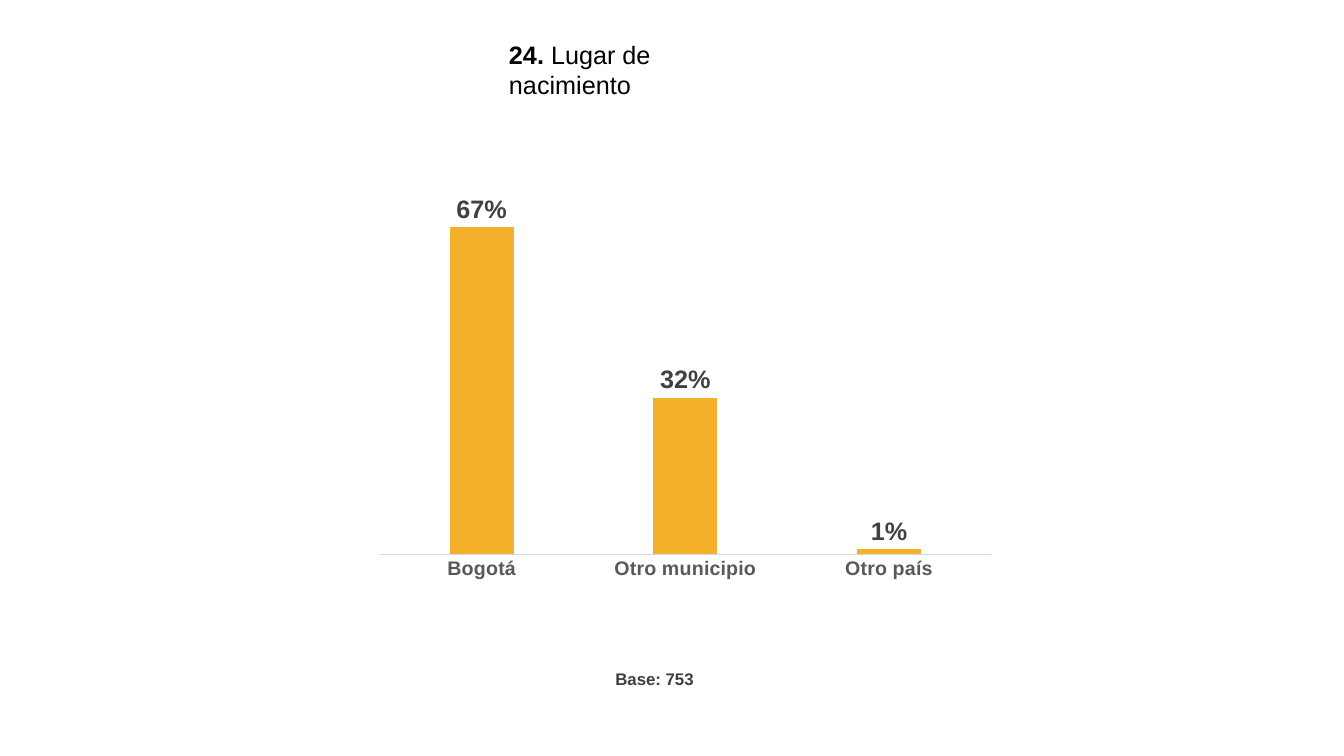
import pptx
import pptx.chart.data
import pptx.dml.color
import pptx.enum.chart
import pptx.enum.text
import pptx.oxml
import pptx.oxml.ns
import pptx.util

FONT = "Arial"
WIDTH, HEIGHT = 13.33, 7.5
TITLE = [("24. ", True), ("Lugar de nacimiento", False)]
BASE = [("Base: 753", True)]
BIRTHPLACES = {"Bogotá": 0.67, "Otro municipio": 0.32, "Otro país": 0.01}
TITLE_BOX = (4.95, 0.34, 2.76, 0.4)
BASE_BOX = (5.68, 6.62, 1.3, 0.25)
CHART_BOX = (WIDTH / 6, 0.79, WIDTH * 2 / 3, 5.93)
PLOT_AREA = {"x": 0.174, "y": 0.141, "w": 0.682, "h": 0.653}


def color(hex_text):
    return pptx.dml.color.RGBColor.from_string(hex_text)


def inches(box):
    return [pptx.util.Inches(length) for length in box]


def style(font, size, hex_text, bold=None):
    font.name = FONT
    font.size = pptx.util.Pt(size)
    font.color.rgb = color(hex_text)
    font.bold = bold


def add_text(slide, box, runs, size, hex_text):
    frame = slide.shapes.add_textbox(*inches(box)).text_frame
    frame.word_wrap = True
    frame.auto_size = pptx.enum.text.MSO_AUTO_SIZE.SHAPE_TO_FIT_TEXT
    paragraph = frame.paragraphs[0]
    style(paragraph.font, size, hex_text)
    for text, bold in runs:
        run = paragraph.add_run()
        run.text = text
        style(run.font, size, hex_text, bold)
    return paragraph


def place_plot(chart):
    plot_area = chart.plots[0]._element.getparent()
    for layout in plot_area.findall(pptx.oxml.ns.qn("c:layout")):
        plot_area.remove(layout)
    modes = "".join(f'<c:{side}Mode val="edge"/>' for side in "xy")
    shares = "".join(f'<c:{key} val="{share}"/>' for key, share in PLOT_AREA.items())
    plot_area.insert(0, pptx.oxml.parse_xml(
        f'<c:layout {pptx.oxml.ns.nsdecls("c")}><c:manualLayout>'
        f'<c:layoutTarget val="inner"/>{modes}{shares}</c:manualLayout></c:layout>'))


def add_birthplace_chart(slide):
    data = pptx.chart.data.CategoryChartData(number_format="0%")
    data.categories = list(BIRTHPLACES)
    data.add_series("Series 1", list(BIRTHPLACES.values()))
    chart = slide.shapes.add_chart(
        pptx.enum.chart.XL_CHART_TYPE.COLUMN_CLUSTERED, *inches(CHART_BOX), data).chart
    style(chart.font, 10, "000000")
    chart.has_legend = False
    chart.has_title = False
    place_plot(chart)

    category_axis = chart.category_axis
    category_axis.major_tick_mark = pptx.enum.chart.XL_TICK_MARK.NONE
    category_axis.format.line.color.rgb = color("D9D9D9")
    category_axis.format.line.width = pptx.util.Pt(0.75)
    style(category_axis.tick_labels.font, 14, "595959", True)

    value_axis = chart.value_axis
    value_axis.visible = False
    value_axis.has_major_gridlines = False
    value_axis.minimum_scale, value_axis.maximum_scale = 0, 0.8

    plot = chart.plots[0]
    plot.gap_width, plot.overlap = 219, -27
    plot.vary_by_categories = False
    series = plot.series[0]
    series.format.fill.solid()
    series.format.fill.fore_color.rgb = color("F5B02B")
    labels = series.data_labels
    labels.show_value = True
    labels.position = pptx.enum.chart.XL_LABEL_POSITION.OUTSIDE_END
    labels.number_format = "0%"
    labels.number_format_is_linked = False
    style(labels.font, 18, "404040", True)


def main():
    """Build the birthplace slide and save it."""
    presentation = pptx.Presentation()
    presentation.slide_width, presentation.slide_height = inches((WIDTH, HEIGHT))
    slide = presentation.slides.add_slide(presentation.slide_layouts[6])
    add_text(slide, TITLE_BOX, TITLE, 18, "000000")
    add_birthplace_chart(slide)
    base = add_text(slide, BASE_BOX, BASE, 12, "3F3F3F")
    base.alignment = pptx.enum.text.PP_ALIGN.RIGHT
    base.line_spacing = 0.83
    presentation.save("out.pptx")


if __name__ == "__main__":
    main()
